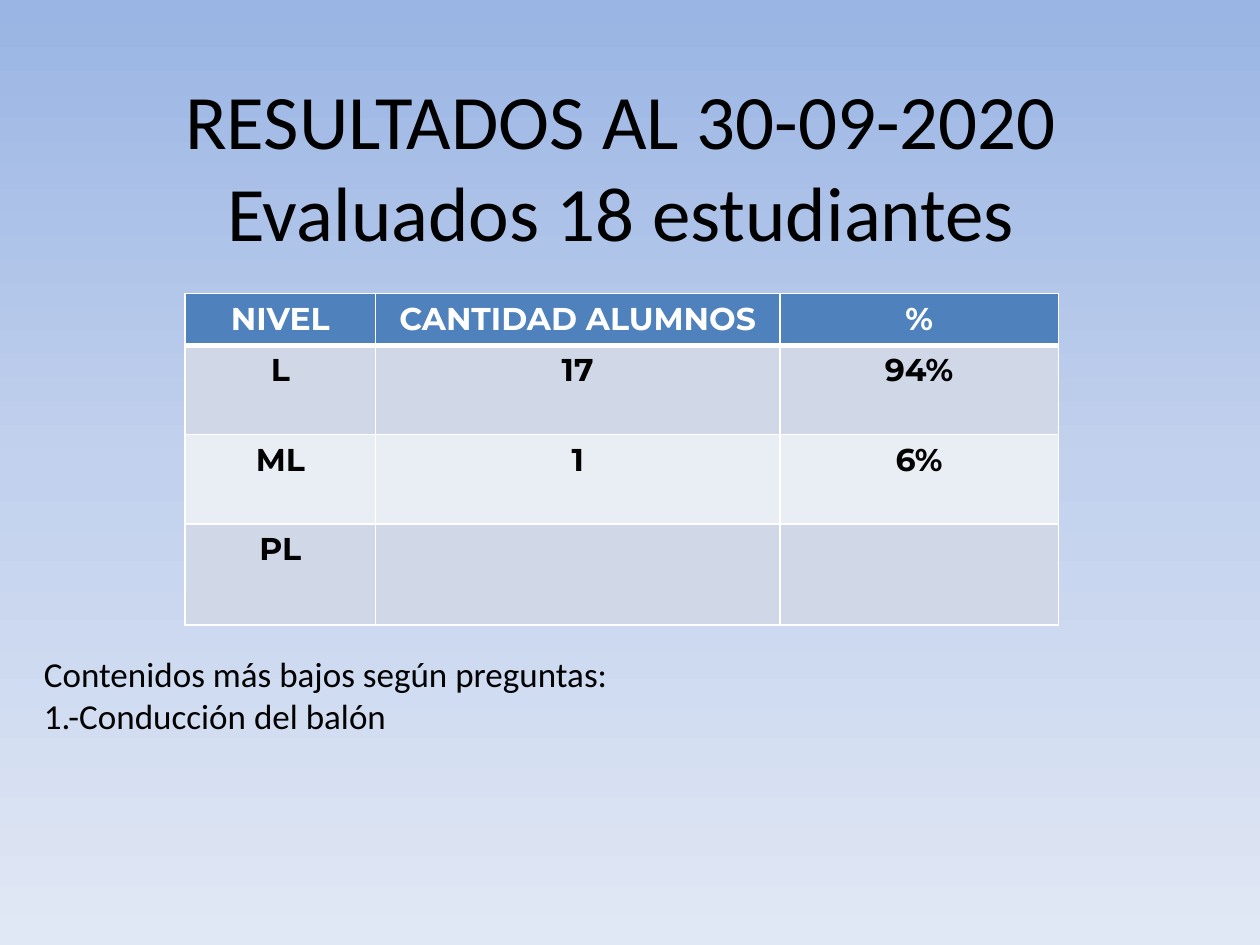
from dataclasses import dataclass
from pptx import Presentation
from pptx.dml.color import RGBColor
from pptx.enum.text import MSO_ANCHOR, PP_ALIGN
from pptx.oxml import parse_xml
from pptx.oxml.ns import nsdecls, qn
from pptx.util import Inches, Pt


@dataclass(frozen=True)
class Theme:
    sky: tuple = ((0, "9AB5E4"), (50, "C2D1ED"), (100, "E1E8F5"))
    ink: str = "000000"
    white: str = "FFFFFF"
    head: str = "4F81BD"
    bands: tuple = ("D0D8E8", "E9EDF4")
    body: str = "Calibri"
    grid: str = "Montserrat"
    title: int = 44
    note: int = 20
    cell: int = 18


THEME = Theme()
WIDE, HIGH = 10, 7.5
COLS = (1.51, 3.21, 2.21)
ROWS = (0.41, 0.71, 0.71, 0.8)
DATA = (
    ("NIVEL", "CANTIDAD ALUMNOS", "%"),
    ("L", "17", "94%"),
    ("ML", "1", "6%"),
    ("PL", "", ""),
)


def style(frame, face, size, color, align, bold=False):
    for para in frame.paragraphs:
        para.alignment = align
        for run in para.runs:
            font = run.font
            font.name, font.size, font.bold = face, Pt(size), bold
            font.color.rgb = RGBColor.from_string(color)


def add_sky(slide):
    """Fill the background with the theme's gradient, top to bottom."""
    fill = slide.background.fill
    fill.gradient()
    fill.gradient_angle = 270
    stops = slide.element.find(".//" + qn("a:gsLst"))
    for stop in list(stops):
        stops.remove(stop)
    for share, color in THEME.sky:
        stops.append(parse_xml(
            f'<a:gs {nsdecls("a")} pos="{share * 1000}">'
            f'<a:srgbClr val="{color}"/></a:gs>'))


def add_text(slide, box, text, size, align, anchor=MSO_ANCHOR.TOP):
    frame = slide.shapes.add_textbox(*map(Inches, box)).text_frame
    frame.word_wrap = True
    frame.vertical_anchor = anchor
    frame.text = text
    style(frame, THEME.body, size, THEME.ink, align)


def add_edges(cell, top, base):
    """Draw white cell borders; top and base are widths in points."""
    props = cell._tc.get_or_add_tcPr()
    edges = (("lnL", 1), ("lnR", 1), ("lnT", top), ("lnB", base))
    for spot, (tag, width) in enumerate(edges):
        props.insert(spot, parse_xml(
            f'<a:{tag} {nsdecls("a")} w="{Pt(width)}"><a:solidFill>'
            f'<a:srgbClr val="{THEME.white}"/></a:solidFill></a:{tag}>'))


def add_grid(slide, left, top):
    table = slide.shapes.add_table(
        len(ROWS), len(COLS), Inches(left), Inches(top),
        Inches(sum(COLS)), Inches(sum(ROWS))).table
    for col, width in zip(table.columns, COLS):
        col.width = Inches(width)
    for i, (row, height) in enumerate(zip(table.rows, ROWS)):
        row.height = Inches(height)
        back = THEME.bands[(i - 1) % 2] if i else THEME.head
        color = THEME.ink if i else THEME.white
        for cell, text in zip(row.cells, DATA[i]):
            cell.text = text
            style(cell.text_frame, THEME.grid, THEME.cell, color,
                  PP_ALIGN.CENTER, True)
            cell.fill.solid()
            cell.fill.fore_color.rgb = RGBColor.from_string(back)
            add_edges(cell, 3 if i == 1 else 1, 1 if i else 3)


def main():
    deck = Presentation()
    deck.slide_width, deck.slide_height = Inches(WIDE), Inches(HIGH)
    slide = deck.slides.add_slide(deck.slide_layouts[6])
    add_sky(slide)
    add_text(slide, (0.43, 0.44, 0.9 * WIDE, 1.73),
             "RESULTADOS AL 30-09-2020\vEvaluados 18 estudiantes",
             THEME.title, PP_ALIGN.CENTER, MSO_ANCHOR.MIDDLE)
    add_grid(slide, 1.47, 2.33)
    add_text(slide, (0.25, 5.13, 9.37, 0.77),
             "Contenidos más bajos según preguntas:\n1.-Conducción del balón",
             THEME.note, PP_ALIGN.LEFT)
    deck.save("out.pptx")


if __name__ == "__main__":
    main()
